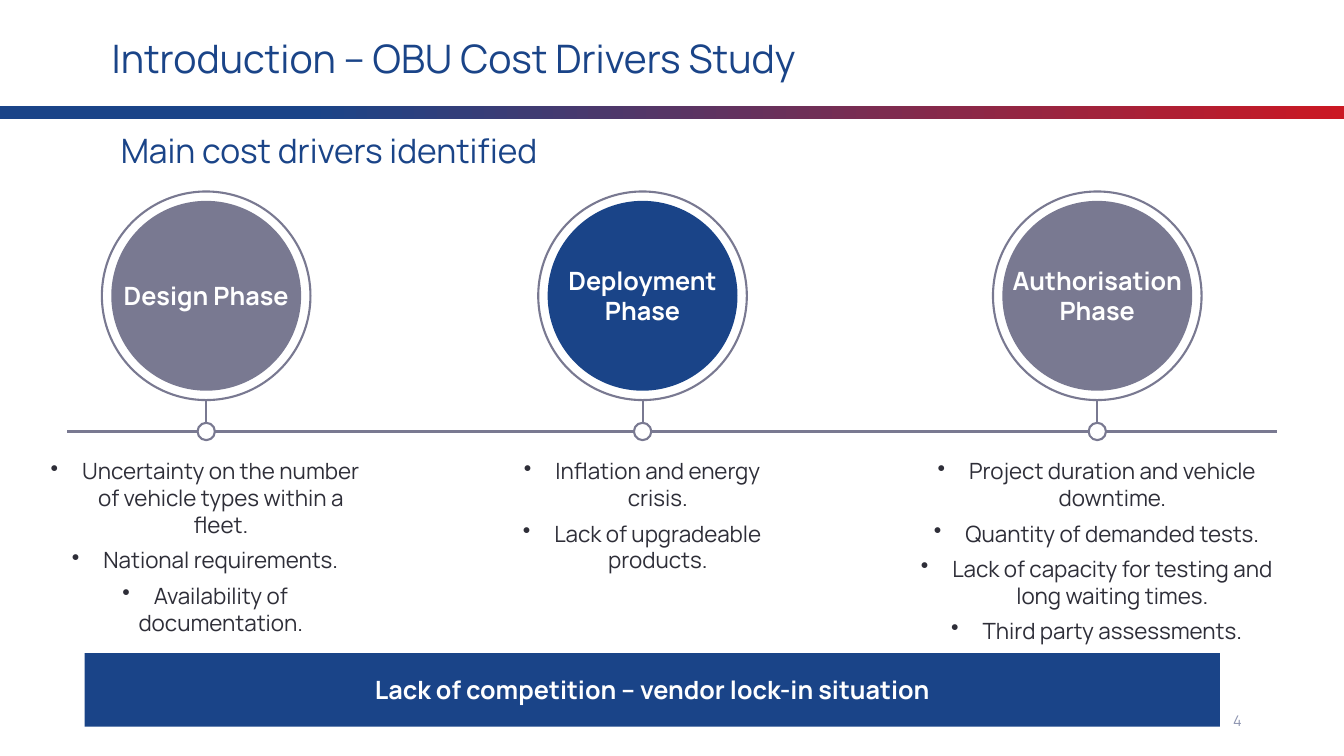
from pptx import Presentation
from pptx import util as u
from pptx.dml.color import RGBColor
from pptx.enum import shapes, text
from pptx.oxml import ns
from lxml import etree

Pt = u.Pt
FONT = "Manrope"
BLUE, RED, GREY, WHITE, INK, MUTED = "1A4488", "CB1823", "797991", "FFFFFF", "2E2E38", "8D94B0"
RING, DISC, NODE = 149, 135.6, 12.4
PHASE_Y, TIMELINE_Y, BULLETS_Y = 211.3, 308.2, 321
OVAL, RECT = shapes.MSO_SHAPE.OVAL, shapes.MSO_SHAPE.RECTANGLE
LEFT, CENTER, RIGHT = text.PP_ALIGN.LEFT, text.PP_ALIGN.CENTER, text.PP_ALIGN.RIGHT
MIDDLE = text.MSO_ANCHOR.MIDDLE

PHASES = [
    (147.3, GREY, ["Design Phase"], 29.5, 234,
     ["Uncertainty on the number of vehicle types within a fleet.",
      "National requirements.", "Availability of documentation."]),
    (459, BLUE, ["Deployment", "Phase"], 359.3, 198.7,
     ["Inflation and energy crisis.", "Lack of upgradeable products."]),
    (783.8, GREY, ["Authorisation", "Phase"], 648.7, 269.3,
     ["Project duration and vehicle downtime.", "Quantity of demanded tests.",
      "Lack of capacity for testing and long waiting times.",
      "Third party assessments."]),
]


def rgb(value):
    return RGBColor.from_string(value)


def apply(obj, values):
    for name, value in values.items():
        setattr(obj, name, value)


def add_bullet(p):
    pPr = p._p.get_or_add_pPr()
    pPr.set("marL", str(Pt(22.5)))
    pPr.set("indent", str(-Pt(22.5)))
    etree.SubElement(pPr, ns.qn("a:buChar")).set("char", "•")


def write(sp, lines, size, color, align=LEFT, bold=False, bullets=False, **frame):
    tf = sp.text_frame
    apply(tf, {"word_wrap": True, **frame})
    for i, line in enumerate(lines):
        p = tf.paragraphs[0] if i == 0 else tf.add_paragraph()
        p.alignment = align
        if bullets:
            p.space_after = Pt(6)
            add_bullet(p)
        r = p.add_run()
        r.text = line
        apply(r.font, {"name": FONT, "size": Pt(size), "bold": bold})
        r.font.color.rgb = rgb(color)


def add_text(s, box, lines, size, color, **options):
    sp = s.shapes.add_textbox(*map(Pt, box))
    write(sp, lines, size, color, **options)


def add_shape(s, kind, box, fill, line=None):
    sp = s.shapes.add_shape(kind, *map(Pt, box))
    sp.shadow.inherit = False
    sp.fill.solid()
    sp.fill.fore_color.rgb = rgb(fill)
    if line:
        sp.line.color.rgb = rgb(line)
        sp.line.width = Pt(1.5)
    else:
        sp.line.fill.background()
    return sp


def add_circle(s, x, y, size, fill, line=None):
    return add_shape(s, OVAL, (x - size / 2, y - size / 2, size, size), fill, line)


def add_line(s, x1, y1, x2, y2):
    line = s.shapes.add_connector(shapes.MSO_CONNECTOR.STRAIGHT, *map(Pt, (x1, y1, x2, y2)))
    line.line.color.rgb = rgb(GREY)
    line.line.width = Pt(1.5)
    etree.SubElement(line._element.spPr, ns.qn("a:effectLst"))


def add_gradient_band(s):
    sp = add_shape(s, RECT, (0, 75.4, 960, 9.6), BLUE)
    sp.fill.gradient()
    sp.fill.gradient_angle = 0
    for stop, position, color in zip(sp.fill.gradient_stops, (0.23, 1), (BLUE, RED)):
        stop.position = position
        stop.color.rgb = rgb(color)


def add_phase(s, x, fill, label, left, width, drivers):
    add_circle(s, x, PHASE_Y, RING, WHITE, GREY)
    disc = add_circle(s, x, PHASE_Y, DISC, fill)
    write(disc, label, 18, WHITE, align=CENTER, bold=True, word_wrap=False,
          vertical_anchor=MIDDLE, margin_left=0, margin_right=0, margin_top=0, margin_bottom=0)
    add_line(s, x, PHASE_Y + RING / 2, x, TIMELINE_Y - NODE / 2)
    add_circle(s, x, TIMELINE_Y, NODE, WHITE, GREY)
    add_text(s, (left, BULLETS_Y, width, 79), drivers, 16, INK, align=CENTER, bullets=True,
             margin_left=0, margin_right=0, margin_top=Pt(5.8), margin_bottom=Pt(5.8))


def main():
    prs = Presentation()
    apply(prs, {"slide_width": Pt(960), "slide_height": Pt(540)})
    s = prs.slides.add_slide(prs.slide_layouts[6])
    add_gradient_band(s)
    add_text(s, (72.7, 21, 568, 41), ["Introduction – OBU Cost Drivers Study"], 28, BLUE)
    add_text(s, (79.2, 89.3, 568, 36), ["Main cost drivers identified"], 24, BLUE)
    add_line(s, 48, TIMELINE_Y, 912, TIMELINE_Y)
    for phase in PHASES:
        add_phase(s, *phase)
    banner = add_shape(s, RECT, (60.5, 466.5, 811, 52.5), BLUE)
    write(banner, ["Lack of competition – vendor lock-in situation"], 18, WHITE,
          align=CENTER, bold=True, vertical_anchor=MIDDLE)
    add_text(s, (678, 500.4, 216, 28.8), ["4"], 10.5, MUTED, align=RIGHT, vertical_anchor=MIDDLE)
    prs.save("out.pptx")


if __name__ == "__main__":
    main()
